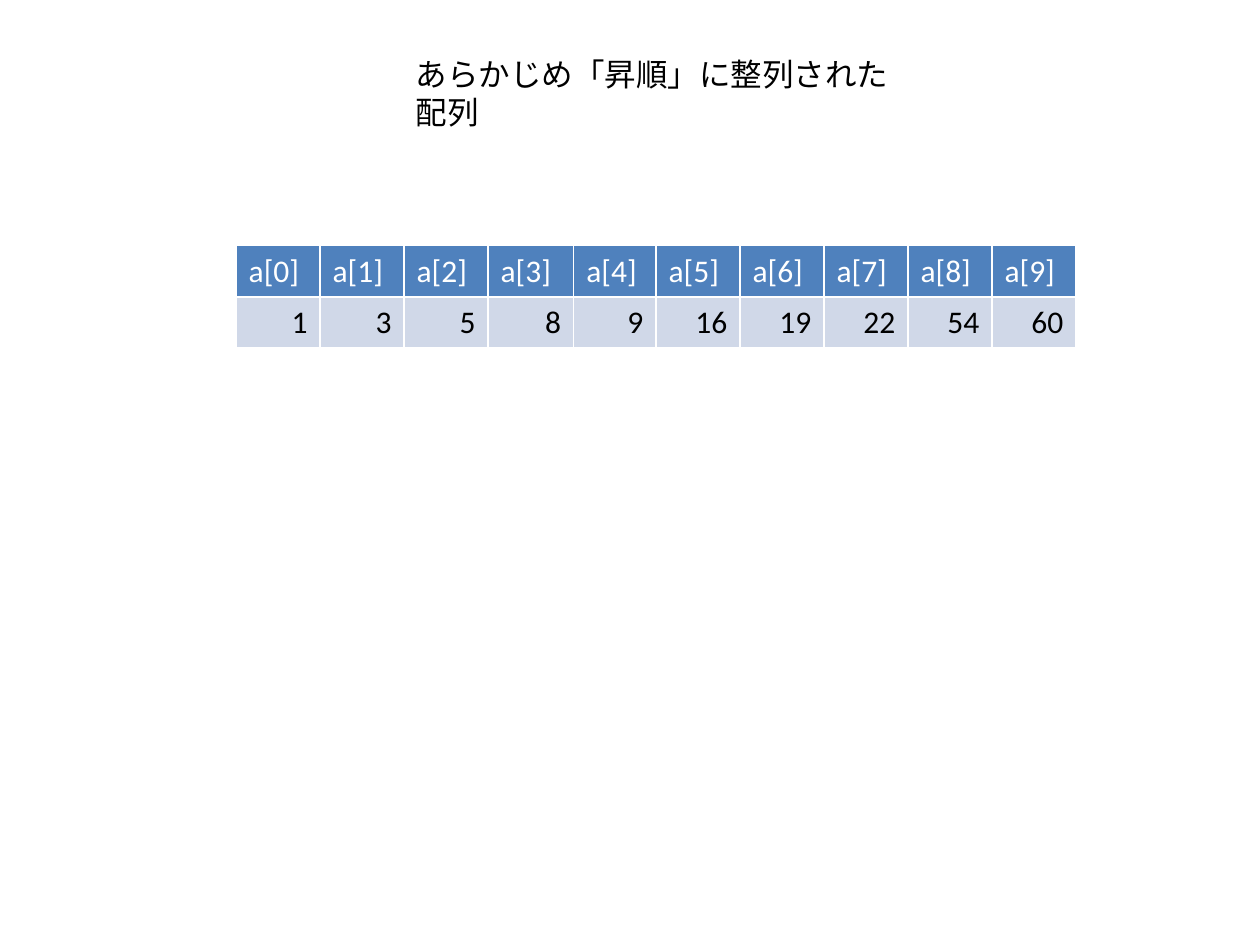
import pptx
import pptx.util
import pptx.dml.color
import pptx.enum.text
import pptx.oxml
import pptx.oxml.ns

Pt = pptx.util.Pt
ALIGN = pptx.enum.text.PP_ALIGN

TITLE = "あらかじめ「昇順」に整列された配列"
VALUES = [1, 3, 5, 8, 9, 16, 19, 22, 54, 60]
COLORS = {"header": "4F81BD", "body": "D0D8E8", "white": "FFFFFF", "black": "000000"}
FONT = "Calibri"
FONT_SIZE = 18

TITLE_BOX = (230.4, 28.08, 289.44, 28.8)
TABLE_LEFT, TABLE_TOP = 134.9, 140.4
COLUMN_WIDTH, ROW_HEIGHT = 48, 29.2
WIDTH_CHANGES = {3: 1, 4: -1}

ROWS = [
    ([f"a[{index}]" for index in range(len(VALUES))], "header", "white", ALIGN.LEFT),
    ([str(value) for value in VALUES], "body", "black", ALIGN.RIGHT),
]


def rgb(name):
    return pptx.dml.color.RGBColor.from_string(COLORS[name])


def write(frame, text, color, align):
    para = frame.paragraphs[0]
    para.alignment = align
    span = para.add_run()
    span.text = text
    span.font.name = FONT
    span.font.size = Pt(FONT_SIZE)
    span.font.bold = False
    span.font.color.rgb = rgb(color)


def add_borders(cell):
    properties = cell._tc.get_or_add_tcPr()
    for position, side in enumerate(("lnL", "lnR", "lnT", "lnB")):
        line = pptx.oxml.parse_xml(
            f'<a:{side} {pptx.oxml.ns.nsdecls("a")} w="{Pt(1)}"><a:solidFill>'
            f'<a:srgbClr val="{COLORS["white"]}"/></a:solidFill></a:{side}>'
        )
        properties.insert(position, line)


def add_title(page):
    box = page.shapes.add_textbox(*map(Pt, TITLE_BOX))
    box.text_frame.word_wrap = True
    write(box.text_frame, TITLE, "black", ALIGN.LEFT)


def add_array(page):
    widths = [COLUMN_WIDTH + WIDTH_CHANGES.get(i, 0) for i in range(len(VALUES))]
    table = page.shapes.add_table(
        len(ROWS), len(VALUES), Pt(TABLE_LEFT), Pt(TABLE_TOP),
        Pt(sum(widths)), Pt(ROW_HEIGHT * len(ROWS)),
    ).table
    for column, width in zip(table.columns, widths):
        column.width = Pt(width)
    for row, (texts, fill, color, align) in zip(table.rows, ROWS):
        row.height = Pt(ROW_HEIGHT)
        for cell, text in zip(row.cells, texts):
            cell.fill.solid()
            cell.fill.fore_color.rgb = rgb(fill)
            add_borders(cell)
            write(cell.text_frame, text, color, align)


def main():
    deck = pptx.Presentation()
    deck.slide_width, deck.slide_height = Pt(720), Pt(540)
    page = deck.slides.add_slide(deck.slide_layouts[6])
    add_array(page)
    add_title(page)
    deck.save("out.pptx")


if __name__ == "__main__":
    main()
